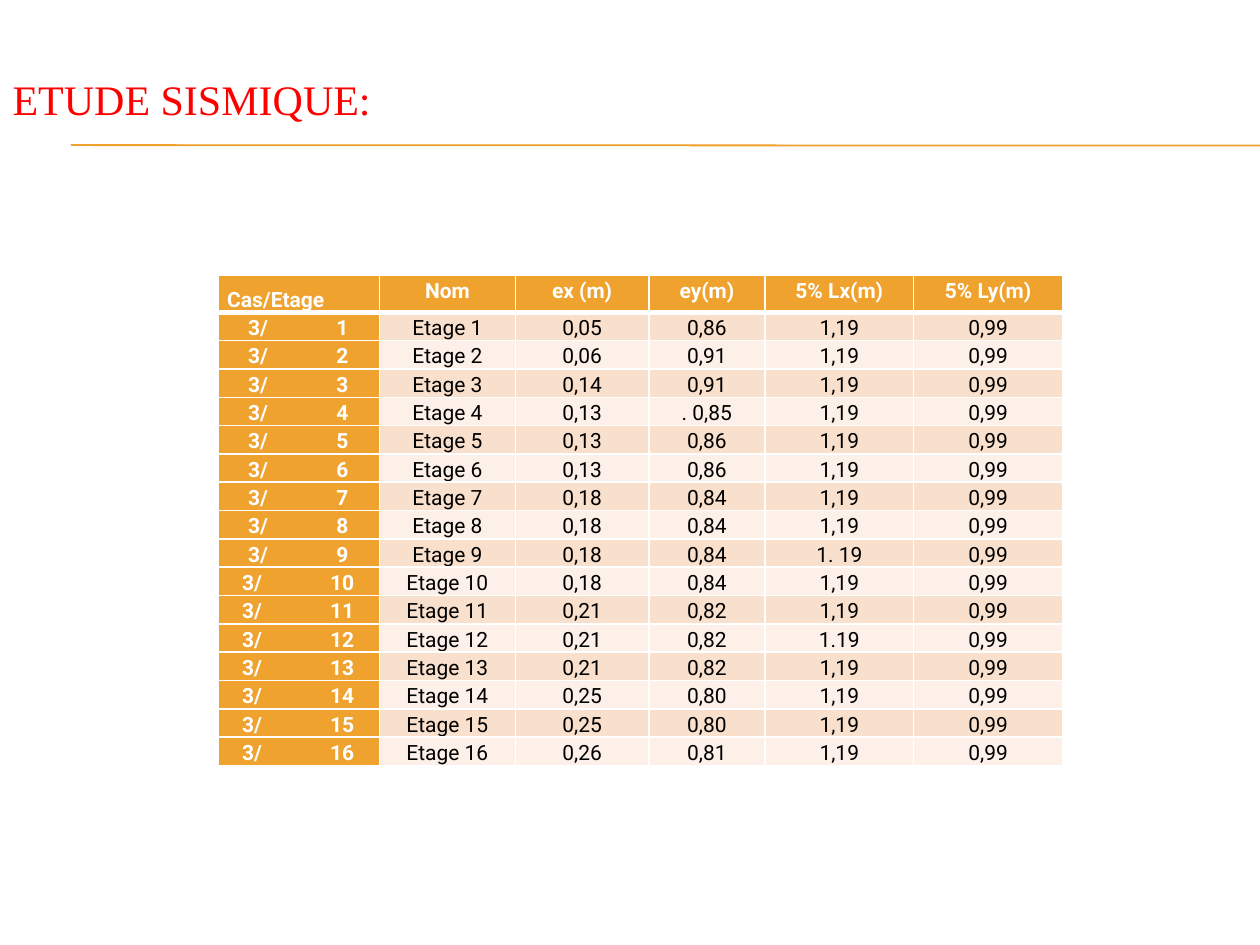
from lxml import etree
from pptx import Presentation
from pptx import util as u
from pptx.dml.color import RGBColor
from pptx.enum import shapes, text
from pptx.oxml import ns

ORANGE = RGBColor(0xF0, 0xA2, 0x2E)
PEACH = RGBColor(0xF9, 0xE0, 0xCD)
CREAM = RGBColor(0xFC, 0xF0, 0xE8)
RED = RGBColor(0xFF, 0x00, 0x00)
WHITE = RGBColor(0xFF, 0xFF, 0xFF)
BLACK = RGBColor(0x00, 0x00, 0x00)

HEADINGS = ["Cas/Etage", "Nom", "ex (m)", "ey(m)", "5% Lx(m)", "5% Ly(m)"]
ECCENTRICITIES = [
    ("0,05", "0,86", "1,19"),
    ("0,06", "0,91", "1,19"),
    ("0,14", "0,91", "1,19"),
    ("0,13", ". 0,85", "1,19"),
    ("0,13", "0,86", "1,19"),
    ("0,13", "0,86", "1,19"),
    ("0,18", "0,84", "1,19"),
    ("0,18", "0,84", "1,19"),
    ("0,18", "0,84", "1. 19"),
    ("0,18", "0,84", "1,19"),
    ("0,21", "0,82", "1,19"),
    ("0,21", "0,82", "1.19"),
    ("0,21", "0,82", "1,19"),
    ("0,25", "0,80", "1,19"),
    ("0,25", "0,80", "1,19"),
    ("0,26", "0,81", "1,19"),
]
COLUMN_WIDTHS = [3.25, 2.74, 2.69, 2.34, 3, 3]
HEADER_HEIGHT = 0.74
STOREY_HEIGHT = 0.57
NUMBER_CENTRE = 2.5


class SlideBuilder:
    title_font = "Times New Roman"
    table_font = "Roboto"
    table_size = u.Pt(12)
    cell_margin = 0.18

    def __init__(self, slide):
        self.slide = slide

    def title(self, wording, left, top, width, height):
        title = self.slide.shapes.title
        title.left, title.top = u.Cm(left), u.Cm(top)
        title.width, title.height = u.Cm(width), u.Cm(height)
        frame = title.text_frame
        frame.text = wording
        frame.vertical_anchor = text.MSO_ANCHOR.MIDDLE
        frame.paragraphs[0].alignment = text.PP_ALIGN.LEFT
        font = frame.paragraphs[0].runs[0].font
        font.name, font.size = self.title_font, u.Pt(24)
        font.color.rgb = RED

    def rule(self, left, start, right, end):
        rule = self.slide.shapes.add_connector(
            shapes.MSO_CONNECTOR.STRAIGHT,
            u.Cm(left), u.Cm(start), u.Cm(right), u.Cm(end))
        rule.line.color.rgb = ORANGE
        rule.line.width = u.Pt(0.75)
        etree.SubElement(rule._element.spPr, ns.qn("a:effectLst"))

    def table(self, rows, left, top, widths, heights):
        frame = self.slide.shapes.add_table(
            len(rows), len(widths), u.Cm(left), u.Cm(top),
            u.Cm(sum(widths)), u.Cm(sum(heights)))
        table = frame.table
        for column, width in zip(table.columns, widths):
            column.width = u.Cm(width)
        for row, height in zip(table.rows, heights):
            row.height = u.Cm(height)
        for r, values in enumerate(rows):
            for c, value in enumerate(values):
                self.cell(table.cell(r, c), value, r, c)

    def cell(self, cell, value, r, c):
        strong = r == 0 or c == 0
        cell.margin_left = cell.margin_right = u.Cm(self.cell_margin)
        cell.margin_top = cell.margin_bottom = 0
        cell.text_frame.text = value
        paragraph = cell.text_frame.paragraphs[0]
        paragraph.alignment = text.PP_ALIGN.LEFT if c == 0 else text.PP_ALIGN.CENTER
        paragraph.line_spacing = 1.5 if r == c == 0 else 1.15
        font = paragraph.runs[0].font
        font.name, font.size, font.bold = self.table_font, self.table_size, strong
        font.color.rgb = WHITE if strong else BLACK
        if c == 0 and r > 0:
            self.align_number(cell, paragraph, 0.6 if r < 10 else 0.48)
        self.borders(cell, 3 if r == 0 else 1, 3 if r == 1 else 1)
        cell.fill.solid()
        cell.fill.fore_color.rgb = ORANGE if strong else PEACH if r % 2 else CREAM

    def align_number(self, cell, paragraph, margin):
        cell.margin_left = u.Cm(margin)
        stops = etree.SubElement(paragraph._p.get_or_add_pPr(), ns.qn("a:tabLst"))
        etree.SubElement(stops, ns.qn("a:tab"),
                         pos=str(u.Cm(NUMBER_CENTRE - margin)), algn="ctr")

    def borders(self, cell, bottom, top):
        properties = cell._tc.get_or_add_tcPr()
        for side, width in (("L", 1), ("R", 1), ("T", top), ("B", bottom)):
            line = etree.SubElement(properties, ns.qn(f"a:ln{side}"), w=str(u.Pt(width)))
            fill = etree.SubElement(line, ns.qn("a:solidFill"))
            etree.SubElement(fill, ns.qn("a:srgbClr"), val=str(WHITE))


def main():
    deck = Presentation()
    deck.slide_width, deck.slide_height = u.Cm(25.4), u.Cm(19.05)
    builder = SlideBuilder(deck.slides.add_slide(deck.slide_layouts[5]))
    for start in (2.92, 2.93):
        builder.rule(1.43, start, 25.4, start + 0.01)
    builder.title("ETUDE SISMIQUE:", 0, 1, 11.35, 1.98)
    storeys = [
        [f"3/\t{number}", f"Etage {number}", *values, "0,99"]
        for number, values in enumerate(ECCENTRICITIES, 1)
    ]
    heights = [HEADER_HEIGHT] + [STOREY_HEIGHT] * len(storeys)
    builder.table([HEADINGS] + storeys, 4.4, 5.55, COLUMN_WIDTHS, heights)
    deck.save("out.pptx")


if __name__ == "__main__":
    main()
